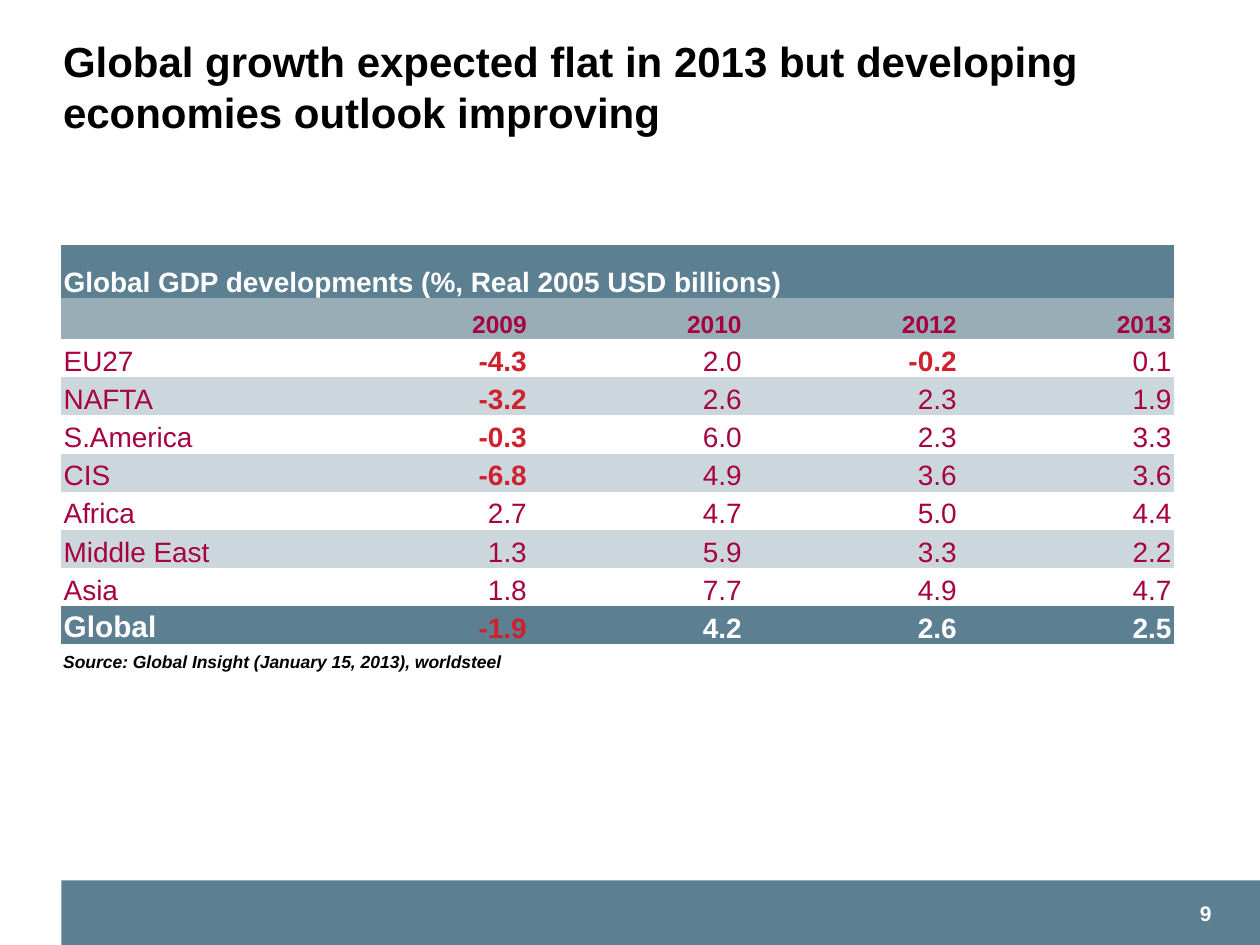
import pptx
import pptx.dml.color
import pptx.enum.shapes
import pptx.enum.text
import pptx.oxml.ns
import pptx.util

Pt = pptx.util.Pt
ALIGN = pptx.enum.text.PP_ALIGN
ANCHOR = pptx.enum.text.MSO_ANCHOR

# Content
TITLE = "Global growth expected flat in 2013 but developing economies outlook improving"
TABLE_TITLE = "Global GDP developments (%, Real 2005 USD billions)"
YEARS = ["2009", "2010", "2012", "2013"]
REGIONS = [
    ("EU27", [-4.3, 2.0, -0.2, 0.1]),
    ("NAFTA", [-3.2, 2.6, 2.3, 1.9]),
    ("S.America", [-0.3, 6.0, 2.3, 3.3]),
    ("CIS", [-6.8, 4.9, 3.6, 3.6]),
    ("Africa", [2.7, 4.7, 5.0, 4.4]),
    ("Middle East", [1.3, 5.9, 3.3, 2.2]),
    ("Asia", [1.8, 7.7, 4.9, 4.7]),
]
TOTAL = ("Global", [-1.9, 4.2, 2.6, 2.5])
SOURCE = "Source: Global Insight (January 15, 2013), worldsteel"
PAGE_NUMBER = "9"

THEME = {
    "font": "Arial",
    "colors": {
        "slate": "5C7F92", "steel": "99ADB7", "mist": "CCD6DD", "white": "FFFFFF",
        "black": "000000", "crimson": "A70240", "negative": "D0202E",
    },
    "sizes": {"title": 24, "table": 16, "years": 14, "total": 17, "source": 10, "number": 12},
}

# Layout, in points
SLIDE_W, SLIDE_H = 720, 540
TABLE_LEFT, TABLE_TOP = 35, 140.2
LABEL_W, VALUE_W = 144.6, 122.8
TITLE_ROW_H, YEARS_ROW_H, ROW_H = 30.2, 22.9, 21.8


def color(name):
    return pptx.dml.color.RGBColor.from_string(THEME["colors"][name])


def write(frame, text, size, ink, bold=True, italic=False, align=ALIGN.LEFT):
    para = frame.paragraphs[0]
    para.alignment = align
    span = para.add_run()
    span.text = text
    span.font.name = THEME["font"]
    span.font.size = Pt(THEME["sizes"][size])
    span.font.bold = bold
    span.font.italic = italic
    span.font.color.rgb = color(ink)


def add_label(page, left, top, width, height, *text, **style):
    box = page.shapes.add_textbox(Pt(left), Pt(top), Pt(width), Pt(height))
    box.text_frame.word_wrap = True
    write(box.text_frame, *text, **style)


def add_values(table, row, values, ink, bold):
    for column, value in enumerate(values, start=1):
        below_zero = value < 0
        write(table.cell(row, column).text_frame, f"{value:.1f}", "table",
              "negative" if below_zero else ink, bold or below_zero, align=ALIGN.RIGHT)


def add_gdp_table(page):
    heights = [TITLE_ROW_H, YEARS_ROW_H] + [ROW_H] * (len(REGIONS) + 1)
    widths = [LABEL_W] + [VALUE_W] * len(YEARS)
    frame = page.shapes.add_table(len(heights), len(widths), Pt(TABLE_LEFT), Pt(TABLE_TOP),
                                  Pt(sum(widths)), Pt(sum(heights)))
    table = frame.table
    table.first_row = table.horz_banding = False
    # Plain table style, without grid lines
    for style in frame.element.iter(pptx.oxml.ns.qn("a:tableStyleId")):
        style.text = "{2D5ABB26-0587-4C30-8999-92F81FD0307C}"
    for column, width in zip(table.columns, widths):
        column.width = Pt(width)

    # Row heights, fills and cell margins
    bands = ["white" if i % 2 == 0 else "mist" for i in range(len(REGIONS))]
    fills = ["slate", "steel"] + bands + ["slate"]
    for row, height, fill in zip(table.rows, heights, fills):
        row.height = Pt(height)
        for cell in row.cells:
            cell.fill.solid()
            cell.fill.fore_color.rgb = color(fill)
            cell.vertical_anchor = ANCHOR.BOTTOM
            cell.margin_left = cell.margin_right = cell.margin_top = Pt(1.4)
            cell.margin_bottom = 0

    # Heading rows
    table.cell(0, 0).merge(table.cell(0, len(YEARS)))
    write(table.cell(0, 0).text_frame, TABLE_TITLE, "table", "white")
    for column, year in enumerate(YEARS, start=1):
        write(table.cell(1, column).text_frame, year, "years", "crimson", align=ALIGN.RIGHT)

    # Regions and total
    for row, (region, values) in enumerate(REGIONS, start=2):
        write(table.cell(row, 0).text_frame, region, "table", "crimson", bold=False)
        add_values(table, row, values, "crimson", bold=False)
    last = len(heights) - 1
    write(table.cell(last, 0).text_frame, TOTAL[0], "total", "white")
    add_values(table, last, TOTAL[1], "white", bold=True)


def main():
    deck = pptx.Presentation()
    deck.slide_width, deck.slide_height = Pt(SLIDE_W), Pt(SLIDE_H)
    page = deck.slides.add_slide(deck.slide_layouts[5])

    # Footer band
    band = page.shapes.add_shape(pptx.enum.shapes.MSO_SHAPE.RECTANGLE, Pt(TABLE_LEFT), Pt(503),
                                 Pt(SLIDE_W - TABLE_LEFT), Pt(SLIDE_H - 503))
    band.shadow.inherit = False
    band.fill.solid()
    band.fill.fore_color.rgb = color("slate")
    band.line.fill.background()

    # Title
    title = page.shapes.title
    title.left, title.top, title.width, title.height = Pt(36), Pt(23.8), Pt(671), Pt(51)
    frame = title.text_frame
    frame.margin_left = frame.margin_top = frame.margin_right = frame.margin_bottom = 0
    frame.vertical_anchor = ANCHOR.MIDDLE
    frame.word_wrap = True
    frame.auto_size = pptx.enum.text.MSO_AUTO_SIZE.NONE
    write(frame, TITLE, "title", "black")

    # Table, source and page number
    add_gdp_table(page)
    add_label(page, 29, 368.6, 422, 19.4, SOURCE, "source", "black", italic=True)
    add_label(page, 531.4, 511.2, 168, 28.8, PAGE_NUMBER, "number", "white", align=ALIGN.RIGHT)

    deck.save("out.pptx")


if __name__ == "__main__":
    main()
